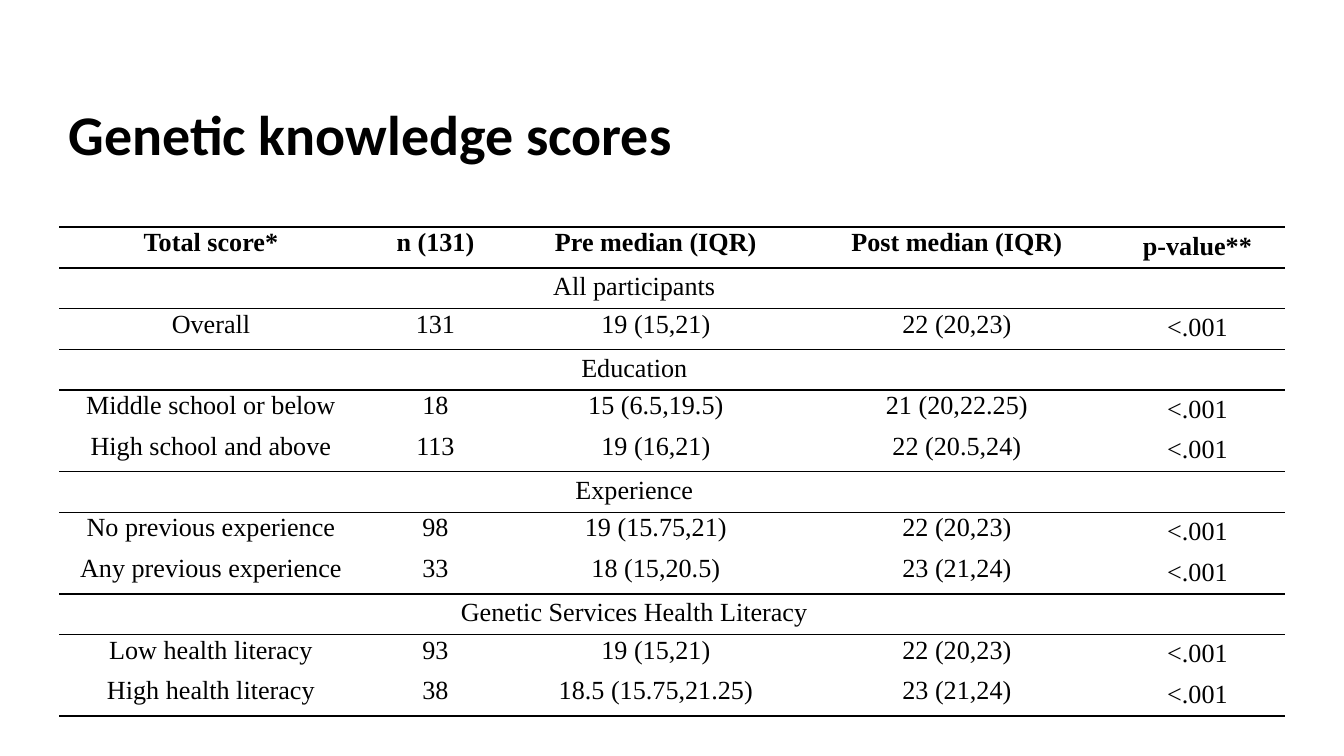
from lxml import etree
from pptx import Presentation
from pptx import util as u
from pptx.dml.color import RGBColor
from pptx.enum import text
from pptx.oxml.ns import qn

PX = 4572  # 200 px to the inch
BLACK = RGBColor(0, 0, 0)
NO_STYLE = "{2D5ABB26-0587-4C30-8999-92F81FD0307C}"

COLUMN_WIDTHS = [452, 216, 440, 456, 148, 112]
ROW_HEIGHT = 60
SCORES = [
    ["Total score*", "n (131)", "Pre median (IQR)", "Post median (IQR)", "p-value**"],
    ["All participants"],
    ["Overall", "131", "19 (15,21)", "22 (20,23)", "<.001"],
    ["Education"],
    ["Middle school or below", "18", "15 (6.5,19.5)", "21 (20,22.25)", "<.001"],
    ["High school and above", "113", "19 (16,21)", "22 (20.5,24)", "<.001"],
    ["Experience"],
    ["No previous experience", "98", "19 (15.75,21)", "22 (20,23)", "<.001"],
    ["Any previous experience", "33", "18 (15,20.5)", "23 (21,24)", "<.001"],
    ["Genetic Services Health Literacy"],
    ["Low health literacy", "93", "19 (15,21)", "22 (20,23)", "<.001"],
    ["High health literacy", "38", "18.5 (15.75,21.25)", "23 (21,24)", "<.001"],
]
# Rule widths in points, by the number of rows above the rule
RULES = {0: 1, 1: 1, 2: 0.5, 3: 1, 4: 1, 6: 1, 7: 1, 9: 1, 10: 1, 12: 1}


def write(frame, words, size, font, bold=False, align=text.PP_ALIGN.LEFT, spacing=1.0):
    paragraph = frame.paragraphs[0]
    paragraph.alignment = align
    paragraph.line_spacing = spacing
    if not words:
        etree.SubElement(paragraph._p, qn("a:endParaRPr"), sz=str(size * 100))
        return
    run = paragraph.add_run()
    run.text = words
    run.font.size = u.Pt(size)
    run.font.name = font
    run.font.bold = bold
    run.font.color.rgb = BLACK


def add_border(cell, side, points):
    """Draw one side of a cell; zero points leaves it without a line."""
    properties = cell._tc.get_or_add_tcPr()
    line = etree.SubElement(properties, qn(f"a:{side}"), w=str(int(u.Pt(points))))
    if points:
        fill = etree.SubElement(line, qn("a:solidFill"))
        etree.SubElement(fill, qn("a:srgbClr"), val=str(BLACK))
    else:
        etree.SubElement(line, qn("a:noFill"))


prs = Presentation()
prs.slide_width, prs.slide_height = 2000 * PX, 1125 * PX
slide = prs.slides.add_slide(prs.slide_layouts[6])

title = slide.shapes.add_textbox(88 * PX, 96 * PX, 1714 * PX, 218 * PX).text_frame
title.word_wrap = True
title.vertical_anchor = text.MSO_ANCHOR.MIDDLE
title.margin_left = title.margin_right = 14 * PX
title.margin_top = title.margin_bottom = 8 * PX
write(title, "Genetic knowledge scores", size=30, font="Calibri", bold=True, spacing=0.9)

scores = slide.shapes.add_table(
    len(SCORES), len(COLUMN_WIDTHS), 88 * PX, 338 * PX,
    sum(COLUMN_WIDTHS) * PX, len(SCORES) * ROW_HEIGHT * PX).table
scores.first_row = scores.horz_banding = False
scores._tbl.tblPr.find(qn("a:tableStyleId")).text = NO_STYLE
for column, width in zip(scores.columns, COLUMN_WIDTHS):
    column.width = width * PX

for r, values in enumerate(SCORES):
    scores.rows[r].height = ROW_HEIGHT * PX
    is_section = len(values) == 1
    if is_section:
        scores.cell(r, 0).merge(scores.cell(r, 4))
    else:
        scores.cell(r, 4).merge(scores.cell(r, 5))
    for c in range(len(COLUMN_WIDTHS)):
        cell = scores.cell(r, c)
        roomy = is_section or c >= 4
        cell.margin_left = cell.margin_right = (16 if roomy else 12) * PX
        cell.margin_top = (7 if roomy else 2) * PX
        cell.margin_bottom = (7 if roomy else 0) * PX
        write(cell.text_frame, values[c] if c < len(values) else "", size=14,
              font="Times New Roman", bold=r == 0, align=text.PP_ALIGN.CENTER)
        for side, points in (("lnL", 0), ("lnR", 0),
                             ("lnT", RULES.get(r, 0)), ("lnB", RULES.get(r + 1, 0))):
            add_border(cell, side, points)
        cell.fill.background()

prs.save("out.pptx")
